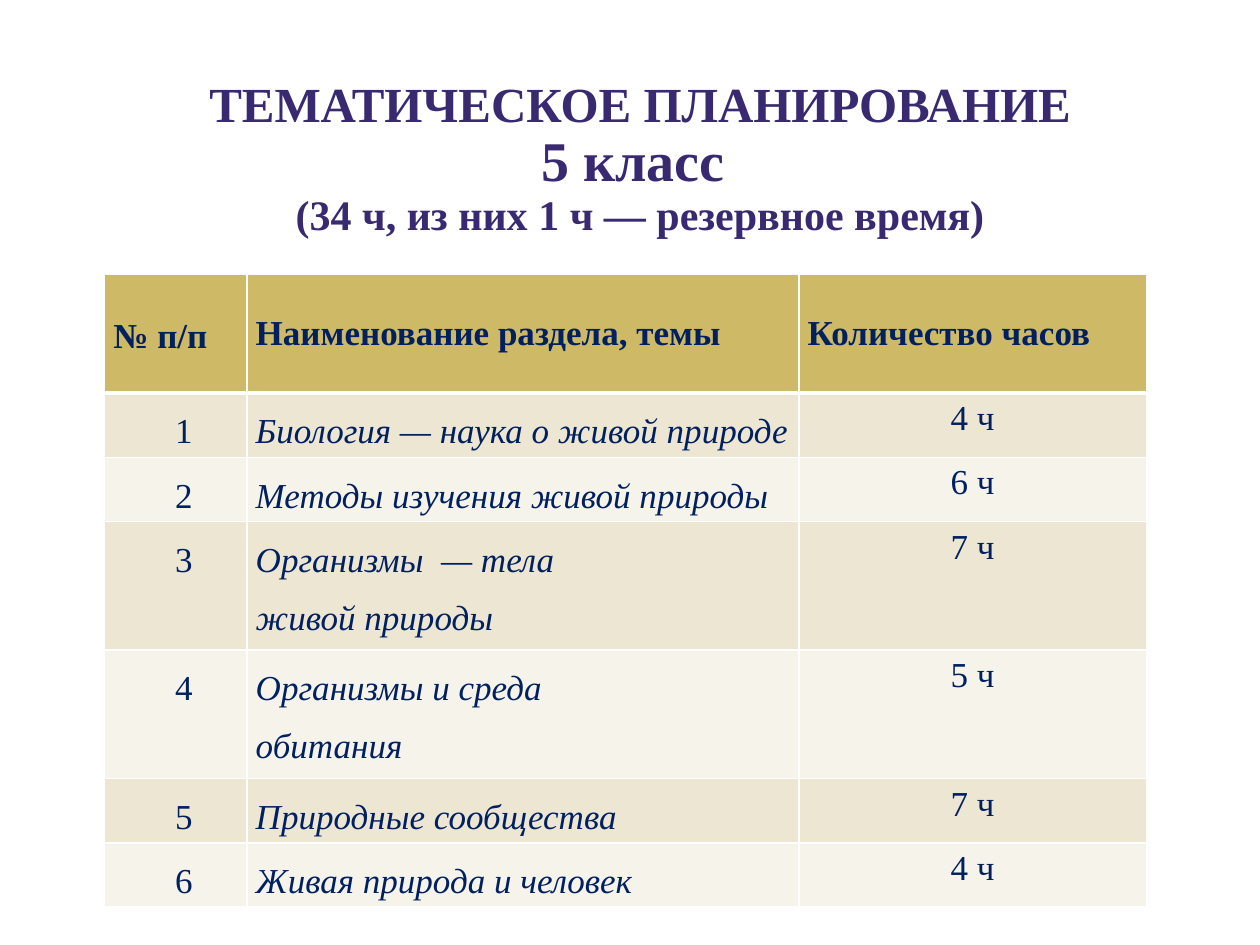
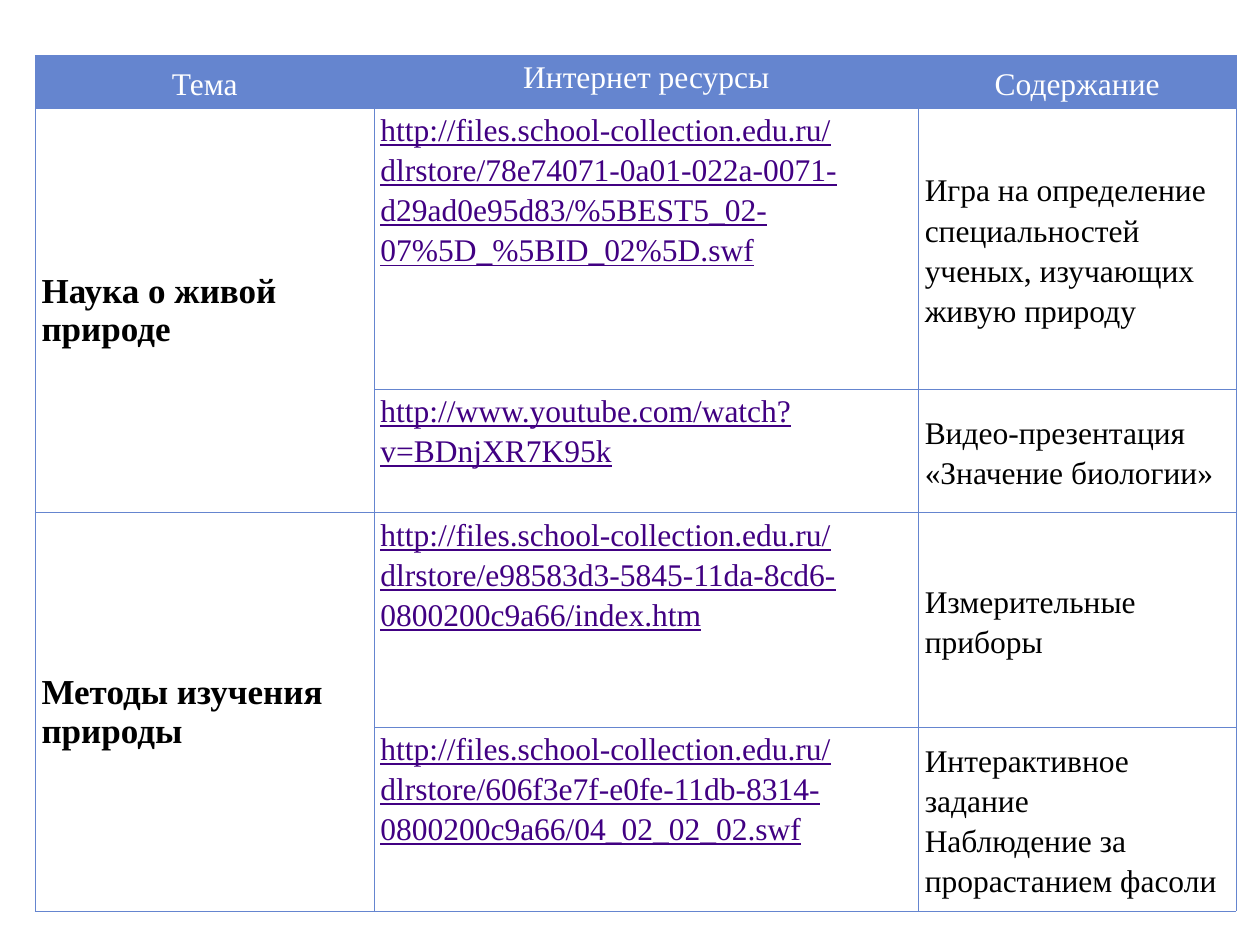
from lxml import etree
from pptx import Presentation
from pptx.dml.color import RGBColor
from pptx.enum.text import MSO_ANCHOR, MSO_AUTO_SIZE, PP_ALIGN
from pptx.oxml.ns import qn
from pptx.util import Inches, Pt

LEFT, CENTER, JUST = PP_ALIGN.LEFT, PP_ALIGN.CENTER, PP_ALIGN.JUSTIFY
TOP, MID = MSO_ANCHOR.TOP, MSO_ANCHOR.MIDDLE
TITLE_ONLY, BLANK = 5, 6
FACE = "Times New Roman"
INDIGO, NAVY, GOLD = "382971", "002060", "CEB966"
BANDS = ("EDE6D3", "F6F3EA")
BLUE, LINK, WHITE, BLACK = "6585CF", "410082", "FFFFFF", "000000"

TITLE = [
    ("ТЕМАТИЧЕСКОЕ ПЛАНИРОВАНИЕ", 28),
    ("5 класс ", 32),
    ("(34 ч, из них 1 ч — резервное время)", 24),
]
PLAN_HEAD = ("№ п/п", "Наименование раздела, темы", "Количество часов")
PLAN = [
    ("Биология — наука о живой природе", 4),
    ("Методы изучения живой природы", 6),
    ("Организмы\u00a0 — тела\nживой природы", 7),
    ("Организмы и среда\nобитания", 5),
    ("Природные сообщества", 7),
    ("Живая природа и человек", 4),
]
PLAN_COLS = (1.13, 4.38, 2.76)
PLAN_ROWS = (0.94, 0.51, 0.51, 1.02, 1.02, 0.51, 0.51)

WEB_HEAD = ("Тема", "Интернет ресурсы", "Содержание")
STORE = "http://files.school-collection.edu.ru/dlrstore/"
WEB = [
    ("Наука о живой природе", [
        (STORE + "78e74071-0a01-022a-0071-d29ad0e95d83/%5BEST5_02-07%5D_%5BID_02%5D.swf",
         "Игра на определение специальностей ученых, изучающих живую природу"),
        ("http://www.youtube.com/watch?v=BDnjXR7K95k",
         "Видео-презентация «Значение биологии»"),
    ]),
    ("Методы изучения природы", [
        (STORE + "e98583d3-5845-11da-8cd6-0800200c9a66/index.htm",
         "Измерительные приборы"),
        (STORE + "606f3e7f-e0fe-11db-8314-0800200c9a66/04_02_02_02.swf",
         "Интерактивное задание\nНаблюдение за прорастанием фасоли"),
    ]),
]
WEB_COLS = (2.69, 4.32, 2.52)
WEB_ROWS = (0.42, 2.23, 0.98, 1.7, 1.46)


def rgb(code):
    return RGBColor.from_string(code)


def style(font, size, color, bold=False, italic=False, under=False):
    font.name, font.size = FACE, Pt(size)
    font.color.rgb = rgb(color)
    font.bold, font.italic, font.underline = bold, italic, under


def write(cell, text, size, color, align=LEFT, space=1.0, anchor=TOP,
          side=0.07, edge=0, indent=0, **look):
    cell.text = text
    cell.vertical_anchor = anchor
    cell.margin_left = cell.margin_right = Inches(side)
    cell.margin_top = cell.margin_bottom = Inches(edge)
    for para in cell.text_frame.paragraphs:
        para.alignment, para.line_spacing = align, space
        if indent:
            para._p.get_or_add_pPr().set("indent", str(Inches(indent)))
        style(para.font, size, color, **look)


def paint(cell, color):
    if color:
        cell.fill.solid()
        cell.fill.fore_color.rgb = rgb(color)
    else:
        cell.fill.background()


def frame(cell, color, width, **sides):
    """Draw all four borders; sides (L, R, T, B) override the width."""
    props = cell._tc.get_or_add_tcPr()
    for spot, side in enumerate("LRTB"):
        line = etree.Element(qn("a:ln" + side), w=str(Pt(sides.get(side, width))))
        fill = etree.SubElement(line, qn("a:solidFill"))
        etree.SubElement(fill, qn("a:srgbClr"), val=color)
        props.insert(spot, line)


def add_grid(slide, left, top, cols, rows):
    grid = slide.shapes.add_table(
        len(rows), len(cols), Inches(left), Inches(top),
        Inches(sum(cols)), Inches(sum(rows))).table
    grid.first_row = grid.horz_banding = False
    for col, width in zip(grid.columns, cols):
        col.width = Inches(width)
    for row, height in zip(grid.rows, rows):
        row.height = Inches(height)
    return grid


def add_title(slide):
    title = slide.shapes.title
    title.left, title.top = Inches(0.83), Inches(0.92)
    title.width, title.height = Inches(8.5), Inches(0.7)
    box = title.text_frame
    box.auto_size, box.vertical_anchor = MSO_AUTO_SIZE.NONE, MID
    para = box.paragraphs[0]
    para.alignment, para.line_spacing = CENTER, 0.9
    for spot, (text, size) in enumerate(TITLE):
        if spot:
            para.add_line_break()
        run = para.add_run()
        run.text = text
        style(run.font, size, INDIGO, bold=True)


def add_plan(deck):
    slide = deck.slides.add_slide(deck.slide_layouts[TITLE_ONLY])
    add_title(slide)
    grid = add_grid(slide, 0.83, 2.18, PLAN_COLS, PLAN_ROWS)
    for col, text in enumerate(PLAN_HEAD):
        cell = grid.cell(0, col)
        write(cell, text, 20, NAVY, space=1 if col else 1.15, anchor=MID, bold=True)
        paint(cell, GOLD)
        frame(cell, WHITE, 1, B=3)
    for row, (topic, hours) in enumerate(PLAN, 1):
        cells = [grid.cell(row, col) for col in range(3)]
        write(cells[0], str(row), 20, NAVY, space=1.5, indent=0.49)
        write(cells[1], topic, 20, NAVY, space=1.5, italic=True)
        write(cells[2], f"{hours} ч", 20, NAVY, CENTER, side=0.1, edge=0.05)
        for cell in cells:
            paint(cell, BANDS[(row - 1) % 2])
            frame(cell, WHITE, 1, T=3 if row == 1 else 1)


def add_web(deck):
    slide = deck.slides.add_slide(deck.slide_layouts[BLANK])
    grid = add_grid(slide, 0.28, 0.44, WEB_COLS, WEB_ROWS)
    for row in range(len(WEB_ROWS)):
        for col in range(len(WEB_COLS)):
            cell = grid.cell(row, col)
            paint(cell, None if row else BLUE)
            frame(cell, BLUE, 0.5)
    for col, (text, anchor) in enumerate(zip(WEB_HEAD, (MID, TOP, MID))):
        write(grid.cell(0, col), text, 18, WHITE, CENTER, 1.15, anchor, 0.05)
    row = 1
    for topic, items in WEB:
        first = grid.cell(row, 0)
        first.merge(grid.cell(row + len(items) - 1, 0))
        write(first, topic, 20, BLACK, anchor=MID, side=0.05, bold=True)
        for link, about in items:
            write(grid.cell(row, 1), link, 18, LINK, JUST, 1.15, TOP, 0.05, under=True)
            write(grid.cell(row, 2), about, 18, BLACK, LEFT, 1.15, MID, 0.05)
            row += 1


def main():
    deck = Presentation()
    deck.slide_width, deck.slide_height = Inches(10), Inches(7.5)
    add_plan(deck)
    add_web(deck)
    deck.save("out.pptx")


if __name__ == "__main__":
    main()
